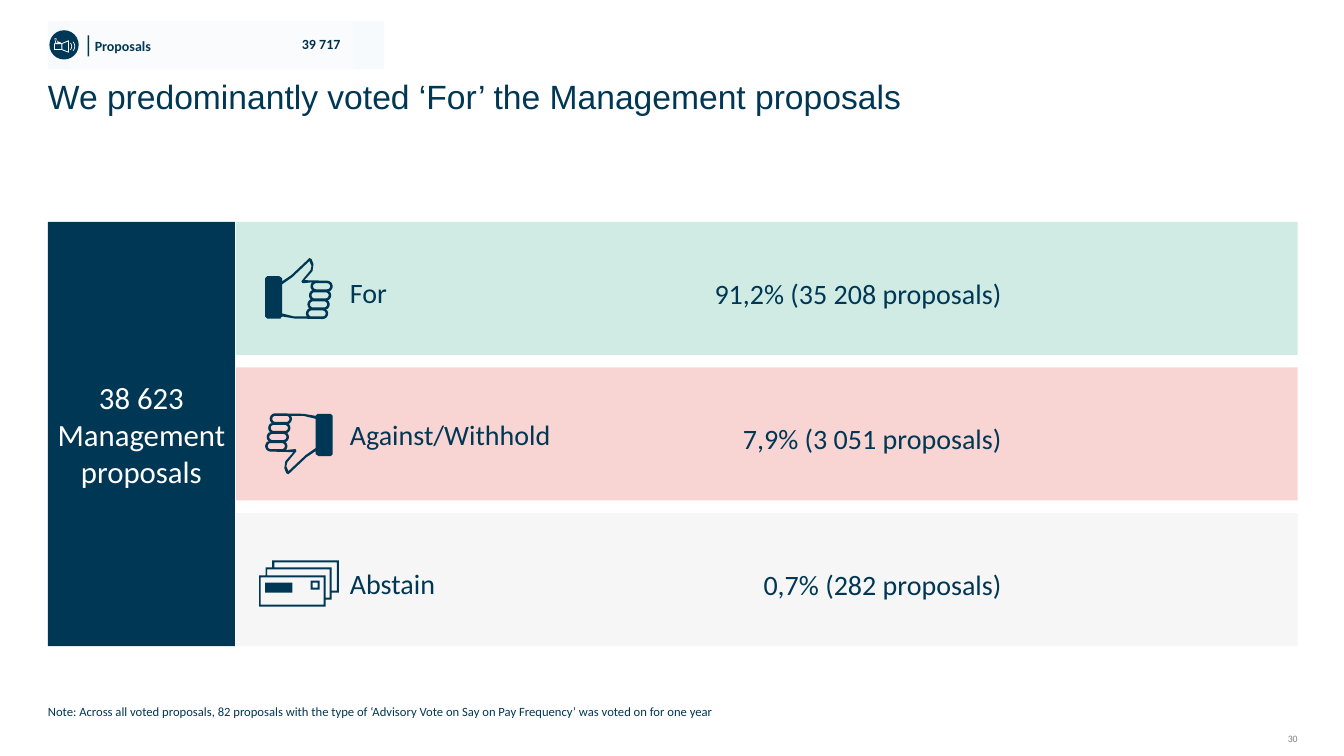
import math

import pptx
import pptx.dml.color
import pptx.enum.shapes
import pptx.enum.text
import pptx.oxml
import pptx.oxml.ns
import pptx.util

NAVY, WHITE = "003755", "FFFFFF"
CELL = pptx.util.Inches(0.01)  # the slide is a grid of 1333 by 750 cells
LEFT, RIGHT = 47.5, 1287
BAND_LEFT, BAND_TOP, BAND_HEIGHT, BAND_STEP = 234, 220, 132, 144.5
LABEL_LEFT = 347

ALIGN = pptx.enum.text.PP_ALIGN
ANCHOR = pptx.enum.text.MSO_ANCHOR
SHAPE = pptx.enum.shapes.MSO_SHAPE


def paint(fill, colour, opacity=100):
    """Fill a shape or a font with a hex colour, opacity in percent."""
    fill.solid()
    fill.fore_color.rgb = pptx.dml.color.RGBColor.from_string(colour)
    if opacity < 100:
        tint = fill.fore_color._xFill.find(pptx.oxml.ns.qn("a:srgbClr"))
        alpha = pptx.oxml.parse_xml(
            f'<a:alpha {pptx.oxml.ns.nsdecls("a")} val="{opacity * 1000}"/>')
        tint.append(alpha)


def arc(x, y, radius, start, end):
    """Points along a circle, angles in degrees, clockwise from the right."""
    turns = [math.radians(start + (end - start) * step / 10) for step in range(11)]
    return [(x + radius * math.cos(turn), y + radius * math.sin(turn)) for turn in turns]


deck = pptx.Presentation()
deck.slide_width, deck.slide_height = 1333 * CELL, 750 * CELL
page = deck.slides.add_slide(deck.slide_layouts[6])

# Filled blocks
blocks = {}
for name, kind, colour, opacity, place in [
    ("for", SHAPE.RECTANGLE, "B2DFD3", 62, None),
    ("against", SHAPE.RECTANGLE, "F4BAB8", 62, None),
    ("abstain", SHAPE.RECTANGLE, "F2F2F2", 62, None),
    ("total", SHAPE.RECTANGLE, NAVY, 100, (LEFT, BAND_TOP, 185.5, 421)),
    ("header", SHAPE.RECTANGLE, "F7FAFC", 100, (LEFT, 21, 333.5, 48)),
    ("header middle", SHAPE.RECTANGLE, "F9FBFD", 100, (69, 21, 281, 48)),
    ("badge", SHAPE.OVAL, NAVY, 100, (49, 30, 29, 29)),
    ("divider", SHAPE.RECTANGLE, NAVY, 100, (87, 35, 1.5, 21)),
]:
    if place is None:
        top = BAND_TOP + BAND_STEP * len(blocks)
        place = (BAND_LEFT, top, RIGHT - BAND_LEFT, BAND_HEIGHT)
    block = page.shapes.add_shape(kind, *(int(length * CELL) for length in place))
    block.shadow.inherit = False
    block.line.fill.background()
    paint(block.fill, colour, opacity)
    blocks[name] = block

# Icons: inner contours cut holes into the outer one
fingers = [(313.5 - 1.5 * row, 324.5 - 1.5 * row, 284 + 9 * row) for row in range(4)]
fist = [(302, 278)]
palm = [(307, 259), (290, 275), (280, 282), (280, 311), (292, 314), (305, 314)]
for row, (inner, outer, middle) in enumerate(fingers):
    fist += arc(outer, middle, 5.5, -55 if row else -90, 55 if row < 3 else 90)
for inner, outer, middle in reversed(fingers):
    palm += arc(inner, middle, 5.5, 135, 225)
fist += [(292, 316), (280, 314), (278, 316), (265, 316), (263, 314), (263, 276),
         (265, 274), (277, 274), (280, 276), (280, 279), (289, 273), (307, 256),
         (309, 257), (311, 262), (310, 269)]
palm += [(300, 281), (299, 279), (308, 268), (309, 264)]
thumb = [fist, palm] + [
    arc(outer, middle, 3, -90, 90) + arc(inner, middle, 3, 90, 270)
    for inner, outer, middle in fingers]

ballots = [
    [(271, 556), (336, 556), (336, 588), (329, 588), (329, 595), (323, 595), (323, 602),
     (257, 602), (257, 571), (263.5, 571), (263.5, 563), (270, 563), (270, 556)],
    [(272, 558), (334, 558), (334, 586), (329, 586), (329, 563), (272, 563)],
    [(265, 565), (327, 565), (327, 593), (323, 593), (323, 571), (265, 571)],
] + [[(x1, y1), (x2, y1), (x2, y2), (x1, y2)] for x1, y1, x2, y2 in [
    (258.5, 573, 321, 600), (263, 578, 290, 588), (308, 576, 317, 585), (310, 578, 315, 583)]]

megaphone = [
    [(54, 38), (56, 38), (57, 41), (60, 42), (61, 43), (68, 40), (68.4, 40.3),
     (68.4, 52), (68, 52.2), (61, 49.5), (53.6, 49.5), (53.6, 43), (55, 43)],
    [(54.5, 38.8), (56, 38.8), (57, 42), (57, 42.7), (56, 42.7)],
    [(54.4, 43.7), (61, 43.7), (61, 48.8), (54.4, 48.8)],
    [(61.8, 43.5), (67.5, 41.2), (67.5, 51.2), (61.8, 49)],
    arc(66.5, 46, 5, -45, 45) + arc(66, 46, 4.8, 45, -45),
    arc(68, 46, 6.5, -45, 45) + arc(67.5, 46, 6.3, 45, -45),
]

for contours, colour, drop, turn in [
    (thumb, NAVY, 0, 0), (thumb, NAVY, 154, 180),
    (ballots, NAVY, 0, 0), (megaphone, WHITE, 0, 0),
]:
    builder = None
    for contour in contours:
        points = [(x * 10, y * 10) for x, y in contour]
        if builder is None:
            builder = page.shapes.build_freeform(*points[0], scale=CELL / 10)
        else:
            builder.move_to(*points[0])
        builder.add_line_segments(points[1:], close=True)
    icon = builder.convert_to_shape()
    icon.top += drop * CELL
    icon.rotation = turn
    icon.shadow.inherit = False
    icon.line.fill.background()
    paint(icon.fill, colour)

# Wording: a block's name or a place, the text, its look
middle = {"vertical_anchor": ANCHOR.MIDDLE}
share = {**middle, "margin_right": 293.5 * CELL, "margin_top": 9 * CELL}
note = ("Note: Across all voted proposals, 82 proposals with the type of "
        "‘Advisory Vote on Say on Pay Frequency’ was voted on for one year")
for place, text, size, colour, align, frame_format, font_format, spacing in [
    ("for", "91,2% (35 208 proposals)", 20, NAVY, ALIGN.RIGHT, share, {}, 1),
    ("against", "7,9% (3 051 proposals)", 20, NAVY, ALIGN.RIGHT, share, {}, 1),
    ("abstain", "0,7% (282 proposals)", 20, NAVY, ALIGN.RIGHT, share, {}, 1),
    ("total", "38 623\nManagement\nproposals", 22, WHITE, ALIGN.CENTER, middle, {}, 1),
    ((LABEL_LEFT, 273, 155, 34), "For", 20, NAVY, ALIGN.LEFT, {}, {}, 1),
    ((LABEL_LEFT, 414, 325, 34), "Against/Withhold", 20, NAVY, ALIGN.LEFT, {}, {}, 1),
    ((LABEL_LEFT, 562, 195, 34), "Abstain", 20, NAVY, ALIGN.LEFT, {}, {}, 1),
    ((LEFT, 698.5, 1048, 15), note, 9, NAVY, ALIGN.LEFT, {}, {}, 1),
    ((LEFT, 80, RIGHT - LEFT, 75), "We predominantly voted ‘For’ the Management proposals",
     24, NAVY, ALIGN.LEFT, {}, {"name": "Arial"}, 0.9),
    ((94, 37, 157, 17), "Proposals", 10, NAVY, ALIGN.LEFT, {}, {"bold": True}, 1),
    ((274, 32.5, 89, 25), "39 717", 10, "00304A", ALIGN.CENTER, middle, {"bold": True}, 0.89),
    ((1244, 727, 43, 12), "30", 7, "7B8185", ALIGN.RIGHT,
     {"vertical_anchor": ANCHOR.BOTTOM}, {}, 1),
]:
    if place in blocks:
        box = blocks[place]
    else:
        box = page.shapes.add_textbox(*(int(length * CELL) for length in place))
    frame = box.text_frame
    margins = dict.fromkeys(["margin_left", "margin_top", "margin_right", "margin_bottom"], 0)
    for key, value in {"word_wrap": True, **margins, **frame_format}.items():
        setattr(frame, key, int(value) if key in margins else value)
    frame.text = text
    for para in frame.paragraphs:
        para.alignment = align
        para.line_spacing = spacing
        span = para.runs[0]
        look = {"name": "Calibri", "size": pptx.util.Pt(size), "bold": False, **font_format}
        for key, value in look.items():
            setattr(span.font, key, value)
        paint(span.font.fill, colour)

deck.save("out.pptx")
